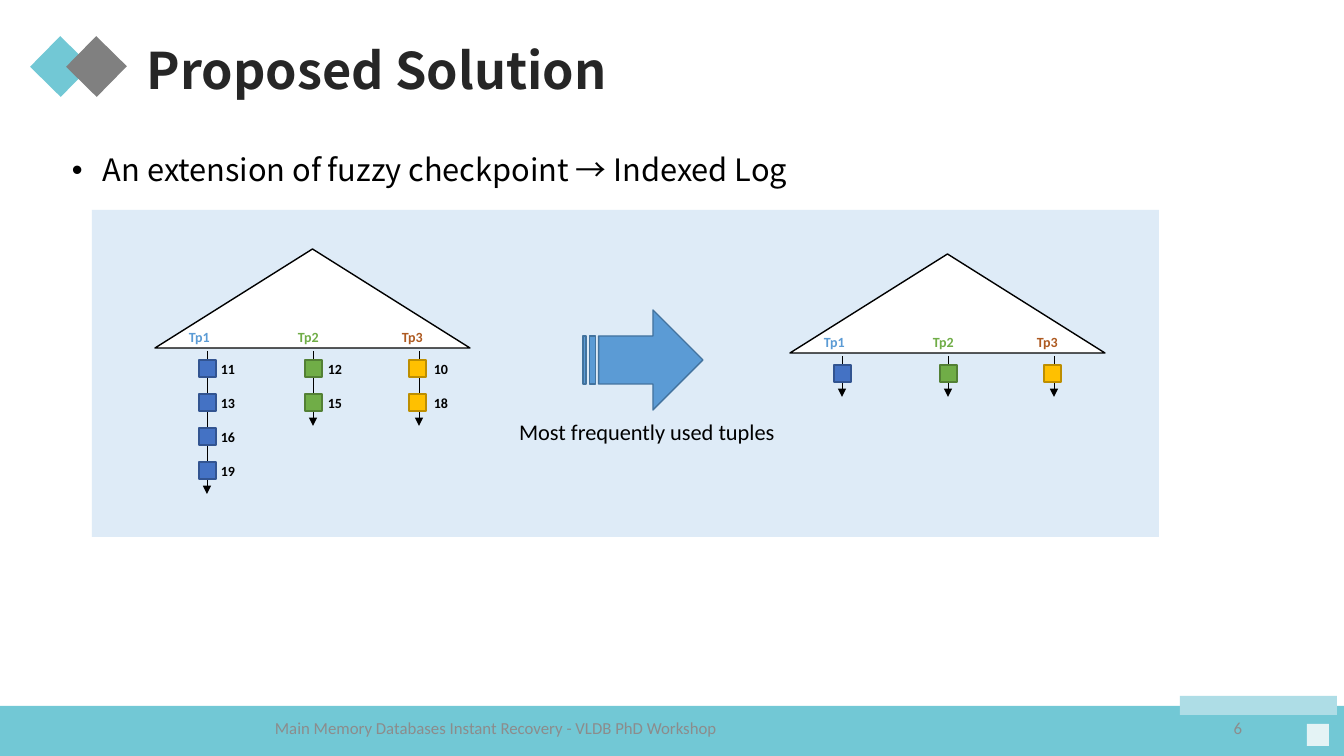
from lxml import etree
from pptx import Presentation
from pptx.dml.color import RGBColor
from pptx.enum.shapes import MSO_CONNECTOR, MSO_SHAPE
from pptx.enum.text import MSO_ANCHOR, PP_ALIGN
from pptx.oxml.ns import qn
from pptx.util import Pt

RECTANGLE = MSO_SHAPE.RECTANGLE
TRIANGLE = MSO_SHAPE.ISOSCELES_TRIANGLE
STRIPED_ARROW = MSO_SHAPE.STRIPED_RIGHT_ARROW
STRAIGHT = MSO_CONNECTOR.STRAIGHT
TOP, MIDDLE = MSO_ANCHOR.TOP, MSO_ANCHOR.MIDDLE
LEFT, CENTER, RIGHT = PP_ALIGN.LEFT, PP_ALIGN.CENTER, PP_ALIGN.RIGHT

EMU_PER_PX = 914400 / 100.8
HEADING_FONT, BODY_FONT = "Noto Sans CJK SC", "Calibri"

# Fill and box (left, top, width, height) of the plain decoration, back to front
BARS = [
    ("72C8D5", (0, 706, 1344, 50)),
    ("AEDDE6", (1180, 696, 157, 19)),
    ("E4F3F5", (1307, 724, 22, 22)),
]
DIAMONDS = [("72C8D5", (39, 45, 43, 43)), ("808080", (75, 45, 43, 43))]
DIAMOND_ANGLE = 44.5
PANEL = ("DEEBF7", (92, 210, 1067, 327))

TEXTS = [
    ("Proposed Solution", (137, 41, 1173, 72),
     {"size": 36, "font": HEADING_FONT, "color": "262626", "bold": True, "line_spacing": 0.9}),
    ("6", (950, 708, 302, 40), {"size": 12, "color": "8C8C8C", "align": RIGHT, "anchor": MIDDLE}),
    ("Main Memory Databases Instant Recovery - VLDB PhD Workshop", (93, 708, 806, 40),
     {"size": 12, "color": "8C8C8C", "align": CENTER, "anchor": MIDDLE}),
    ("Most frequently used tuples", (495, 413, 304, 37),
     {"size": 16, "align": CENTER, "wrap": False}),
]
BULLET = ("An extension of fuzzy checkpoint → Indexed Log", (62, 150, 1219, 458))
BULLET_INDENT = 31

# Offsets are measured from the left end of each index triangle
COLUMNS = [
    {"name": "Tp1", "name_x": 24, "stem_x": 52, "node_x": 44, "log_x": 56,
     "text": "5B9BD5", "fill": "4472C4", "line": "325491"},
    {"name": "Tp2", "name_x": 133, "stem_x": 158, "node_x": 150, "log_x": 163,
     "text": "70AD47", "fill": "70AD47", "line": "538035"},
    {"name": "Tp3", "name_x": 237, "stem_x": 264, "node_x": 254, "log_x": 269,
     "text": "AE5A21", "fill": "FFC000", "line": "BD8E00"},
]
# Triangle left and top, nodes per column, log numbers per column
INDEXES = [
    ((155, 249), (4, 2, 2), (["11", "13", "16", "19"], ["12", "15"], ["10", "18"])),
    ((790, 254), (1, 1, 1), ([], [], [])),
]
TRIANGLE_WIDTH, TRIANGLE_HEIGHT = 315, 99
NAME_Y, STEM_Y, LOG_Y, NODE_Y = 75, 102, 107, 111
NODE_SIZE, NODE_PITCH, STEM_TAIL = 17, 34, 15

presentation = Presentation()
presentation.slide_width = round(1344 * EMU_PER_PX)
presentation.slide_height = round(756 * EMU_PER_PX)
slide = presentation.slides.add_slide(presentation.slide_layouts[6])


def emu(*lengths):
    return [round(length * EMU_PER_PX) for length in lengths]


def rgb(color):
    return RGBColor.from_string(color)


def add_block(kind, box, fill, line=None):
    shape = slide.shapes.add_shape(kind, *emu(*box))
    shape.shadow.inherit = False
    shape.fill.solid()
    shape.fill.fore_color.rgb = rgb(fill)
    if line:
        shape.line.color.rgb = rgb(line)
        shape.line.width = Pt(1)
    else:
        shape.line.fill.background()
    return shape


def add_text(lines, box, size, font=BODY_FONT, color="000000", bold=False, align=LEFT,
             anchor=TOP, wrap=True, line_spacing=1.0, gap=0):
    """Add a text box with one paragraph per line, gap points apart."""
    frame = slide.shapes.add_textbox(*emu(*box)).text_frame
    frame.word_wrap = wrap
    frame.vertical_anchor = anchor
    for number, line in enumerate(lines):
        paragraph = frame.add_paragraph() if number else frame.paragraphs[0]
        paragraph.alignment = align
        paragraph.line_spacing = line_spacing
        paragraph.space_before = Pt(gap if number else 0)
        run = paragraph.add_run()
        run.text = line
        run.font.color.rgb = rgb(color)
        for name, value in {"size": Pt(size), "name": font, "bold": bold}.items():
            setattr(run.font, name, value)
        for tag in ("a:ea", "a:sym"):
            etree.SubElement(run.font._element, qn(tag), typeface=font)
    return frame


def add_bullet(paragraph):
    properties = paragraph._p.get_or_add_pPr()
    indent = emu(BULLET_INDENT)[0]
    properties.set("marL", str(indent))
    properties.set("indent", str(-indent))
    etree.SubElement(properties, qn("a:buFont"), typeface="Arial")
    etree.SubElement(properties, qn("a:buChar"), char="•")


def add_stem(x, top, bottom):
    stem = slide.shapes.add_connector(STRAIGHT, *emu(x, top, x, bottom))
    stem.line.color.rgb = rgb("000000")
    stem.line.width = Pt(0.5)
    etree.SubElement(stem.line._get_or_add_ln(), qn("a:tailEnd"), type="triangle")
    etree.SubElement(stem._element.spPr, qn("a:effectLst"))


def add_column(column, left, top, node_count, log_numbers):
    last_node_bottom = top + NODE_Y + (node_count - 1) * NODE_PITCH + NODE_SIZE
    add_stem(left + column["stem_x"], top + STEM_Y, last_node_bottom + STEM_TAIL)
    add_text([column["name"]], (left + column["name_x"], top + NAME_Y, 60, 27),
             size=10, color=column["text"], bold=True)
    for row in range(node_count):
        node_top = top + NODE_Y + row * NODE_PITCH
        add_block(RECTANGLE, (left + column["node_x"], node_top, NODE_SIZE, NODE_SIZE),
                  column["fill"], column["line"])
    if log_numbers:
        height = len(log_numbers) * NODE_PITCH
        add_text(log_numbers, (left + column["log_x"], top + LOG_Y, 88, height),
                 size=10, bold=True, gap=12.2)


bullet_text, bullet_box = BULLET
bullet_frame = add_text([bullet_text], bullet_box, size=22, font=HEADING_FONT, line_spacing=0.9)
add_bullet(bullet_frame.paragraphs[0])

for fill, box in BARS:
    add_block(RECTANGLE, box, fill)
for fill, box in DIAMONDS:
    add_block(RECTANGLE, box, fill).rotation = DIAMOND_ANGLE
panel_fill, panel_box = PANEL
add_block(RECTANGLE, panel_box, panel_fill)

for (left, top), node_counts, logs in INDEXES:
    add_block(TRIANGLE, (left, top, TRIANGLE_WIDTH, TRIANGLE_HEIGHT), "FFFFFF", "000000")
    for column, node_count, log_numbers in zip(COLUMNS, node_counts, logs):
        add_column(column, left, top, node_count, log_numbers)

arrow = add_block(STRIPED_ARROW, (583, 310, 120, 100), "5B9BD5", "43739E")
arrow.adjustments[0] = 0.48
arrow.adjustments[1] = 0.5

for text, box, text_format in TEXTS:
    add_text([text], box, **text_format)

presentation.save("out.pptx")
